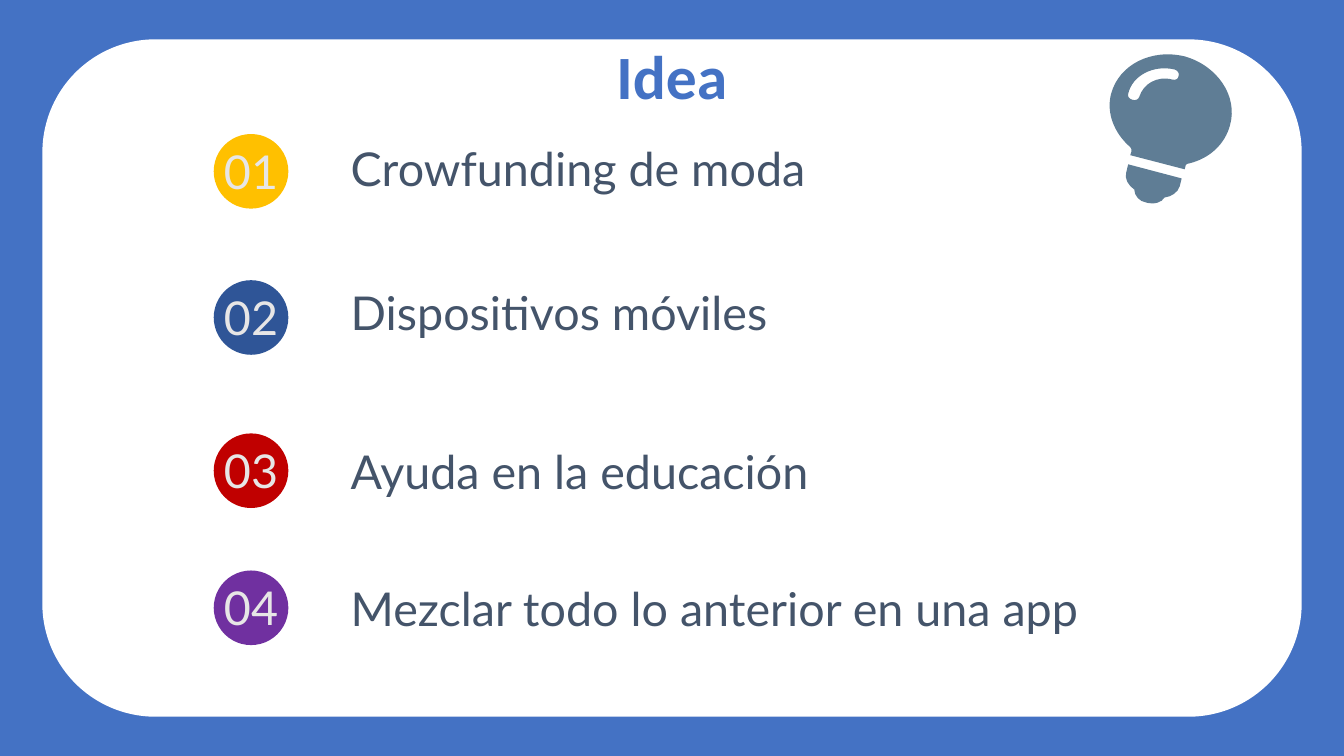
"""Build the "Idea" slide: four numbered ideas on a rounded panel with a light bulb."""
import math
from dataclasses import dataclass

import lxml.etree
import pptx
import pptx.dml.color
import pptx.enum.shapes
import pptx.enum.text
import pptx.oxml.ns
import pptx.util

Inches = pptx.util.Inches
RGBColor = pptx.dml.color.RGBColor
Shapes = pptx.enum.shapes.MSO_SHAPE
Align = pptx.enum.text.PP_ALIGN
Anchor = pptx.enum.text.MSO_ANCHOR
qn = pptx.oxml.ns.qn

BLUE = RGBColor(0x44, 0x72, 0xC4)
WHITE = RGBColor(0xFF, 0xFF, 0xFF)
AMBER = RGBColor(0xFF, 0xC0, 0x00)
NAVY = RGBColor(0x2F, 0x55, 0x97)
RED = RGBColor(0xC0, 0x00, 0x00)
PURPLE = RGBColor(0x70, 0x30, 0xA0)
PALE = RGBColor(0xE7, 0xE6, 0xE6)
SLATE = RGBColor(0x44, 0x54, 0x6A)
STEEL = RGBColor(0x5F, 0x7D, 0x95)

BADGE_LEFT, BADGE_SIZE = 2.12, 0.74
BULB_TILT = 14.3

Box = tuple[float, float, float, float]
Point = tuple[float, float]


@dataclass(frozen=True)
class Idea:
    label: str
    color: RGBColor
    badge_top: float
    label_top: float


@dataclass(frozen=True)
class TextStyle:
    font: str
    size: float
    color: RGBColor
    bold: bool = False
    align: Align = Align.LEFT
    anchor: Anchor = Anchor.TOP
    inset: float = 0.1
    line_spacing: float = 1.0


@dataclass(frozen=True)
class Contour:
    """Closed outline whose segments are lines (one point) or Bézier curves (three points)."""
    start: Point
    segments: tuple[tuple[Point, ...], ...]


@dataclass(frozen=True)
class BulbPart:
    box: Box
    contours: tuple[Contour, ...]


IDEAS = (
    Idea("Crowfunding de moda", AMBER, 1.33, 1.29),
    Idea("Dispositivos móviles", NAVY, 2.78, 2.72),
    Idea("Ayuda en la educación", RED, 4.3, 4.29),
    Idea("Mezclar todo lo anterior en una app", PURPLE, 5.66, 5.65),
)

TITLE = TextStyle("Calibri", 44, BLUE, True, Align.CENTER, Anchor.MIDDLE, 0.13, 0.9)
NUMBER = TextStyle("Lato", 33.3, PALE, align=Align.CENTER, anchor=Anchor.MIDDLE)
LABEL = TextStyle("Lato", 33.3, SLATE)

GLARE = Contour((11.65, 0.69), (
    ((11.68, 0.7), (11.7, 0.73), (11.69, 0.75)),
    ((11.69, 0.78), (11.66, 0.8), (11.63, 0.79)),
    ((11.48, 0.75), (11.34, 0.83), (11.3, 0.96)),
    ((11.29, 0.99), (11.26, 1), (11.23, 0.99)),
    ((11.2, 0.98), (11.18, 0.96), (11.19, 0.93)),
    ((11.23, 0.75), (11.44, 0.64), (11.65, 0.69)),
))
GLASS = Contour((11.75, 0.56), (
    ((11.42, 0.48), (11.1, 0.64), (11.02, 0.93)),
    ((10.97, 1.12), (11.05, 1.32), (11.21, 1.46)),
    ((11.22, 1.47), (11.23, 1.49), (11.22, 1.51)),
    ((11.21, 1.54),),
    ((11.75, 1.68),),
    ((11.76, 1.64),),
    ((11.76, 1.63), (11.78, 1.62), (11.8, 1.62)),
    ((12, 1.57), (12.15, 1.43), (12.2, 1.24)),
    ((12.28, 0.95), (12.07, 0.65), (11.75, 0.56)),
))
SOCKET = Contour((11.19, 1.63), (
    ((11.17, 1.71),),
    ((11.15, 1.77), (11.19, 1.84), (11.25, 1.88)),
    ((11.25, 1.94), (11.3, 2), (11.37, 2.01)),
    ((11.45, 2.03), (11.52, 2.01), (11.55, 1.96)),
    ((11.62, 1.95), (11.68, 1.91), (11.7, 1.85)),
    ((11.72, 1.77),),
))
BULB = (
    BulbPart((11, 0.54, 1.22, 1.08), (GLARE, GLASS)),
    BulbPart((11.14, 1.7, 0.55, 0.32), (SOCKET,)),
)


def paint(shape: pptx.shapes.autoshape.Shape, color: RGBColor) -> None:
    shape.shadow.inherit = False
    shape.fill.solid()
    shape.fill.fore_color.rgb = color
    shape.line.fill.background()


def add_filled(slide: pptx.slide.Slide, kind: Shapes, box: Box,
               color: RGBColor) -> pptx.shapes.autoshape.Shape:
    shape = slide.shapes.add_shape(kind, *map(Inches, box))
    paint(shape, color)
    return shape


def add_text(slide: pptx.slide.Slide, text: str, box: Box, style: TextStyle) -> None:
    frame = slide.shapes.add_textbox(*map(Inches, box)).text_frame
    frame.word_wrap = True
    frame.vertical_anchor = style.anchor
    frame.margin_left = frame.margin_right = Inches(style.inset)
    frame.margin_top = frame.margin_bottom = Inches(style.inset)
    paragraph = frame.paragraphs[0]
    paragraph.alignment = style.align
    paragraph.line_spacing = style.line_spacing
    run = paragraph.add_run()
    run.text = text
    run.font.name = style.font
    run.font.size = pptx.util.Pt(style.size)
    run.font.bold = style.bold
    run.font.color.rgb = style.color


def upright(point: Point, box: Box) -> Point:
    """Turn a point back by the bulb's tilt and measure it from the box corner."""
    left, top, width, height = box
    dx, dy = point[0] - left - width / 2, point[1] - top - height / 2
    cos, sin = math.cos(math.radians(BULB_TILT)), math.sin(math.radians(BULB_TILT))
    return dx * cos + dy * sin + width / 2, dy * cos - dx * sin + height / 2


def add_bulb_part(group: pptx.shapes.group.GroupShape, part: BulbPart) -> None:
    left, top, width, height = map(Inches, part.box)
    builder = group.shapes.build_freeform(left, top)
    builder.add_line_segments(
        [(left + width, top), (left + width, top + height), (left, top + height)])
    shape = builder.convert_to_shape()
    outline = shape.element.find(".//" + qn("a:path"))
    for corner in list(outline):
        outline.remove(corner)

    def draw(command: str, points: tuple[Point, ...] = ()) -> None:
        step = lxml.etree.SubElement(outline, qn(command))
        for point in points:
            x, y = upright(point, part.box)
            lxml.etree.SubElement(step, qn("a:pt"), x=str(int(Inches(x))), y=str(int(Inches(y))))

    for contour in part.contours:
        draw("a:moveTo", (contour.start,))
        for segment in contour.segments:
            draw("a:lnTo" if len(segment) == 1 else "a:cubicBezTo", segment)
        draw("a:close")
    shape.rotation = BULB_TILT
    paint(shape, STEEL)


def main() -> None:
    deck = pptx.Presentation()
    deck.slide_width, deck.slide_height = Inches(13.33), Inches(7.5)
    slide = deck.slides.add_slide(deck.slide_layouts[6])
    slide.background.fill.solid()
    slide.background.fill.fore_color.rgb = BLUE

    panel = add_filled(slide, Shapes.ROUNDED_RECTANGLE, (0.42, 0.39, 12.49, 6.72), WHITE)
    panel.adjustments[0] = 0.167
    add_text(slide, "Idea", (1.05, 0.37, 11.23, 0.84), TITLE)

    for number, idea in enumerate(IDEAS, start=1):
        add_filled(slide, Shapes.OVAL, (BADGE_LEFT, idea.badge_top, BADGE_SIZE, BADGE_SIZE),
                   idea.color)
        add_text(slide, f"{number:02}", (BADGE_LEFT - 0.1, idea.badge_top + 0.17, 0.94, 0.38),
                 NUMBER)
        add_text(slide, idea.label, (3.38, idea.label_top, 7.83, 1.27), LABEL)

    bulb = slide.shapes.add_group_shape()
    for part in BULB:
        add_bulb_part(bulb, part)
    deck.save("out.pptx")


if __name__ == "__main__":
    main()
